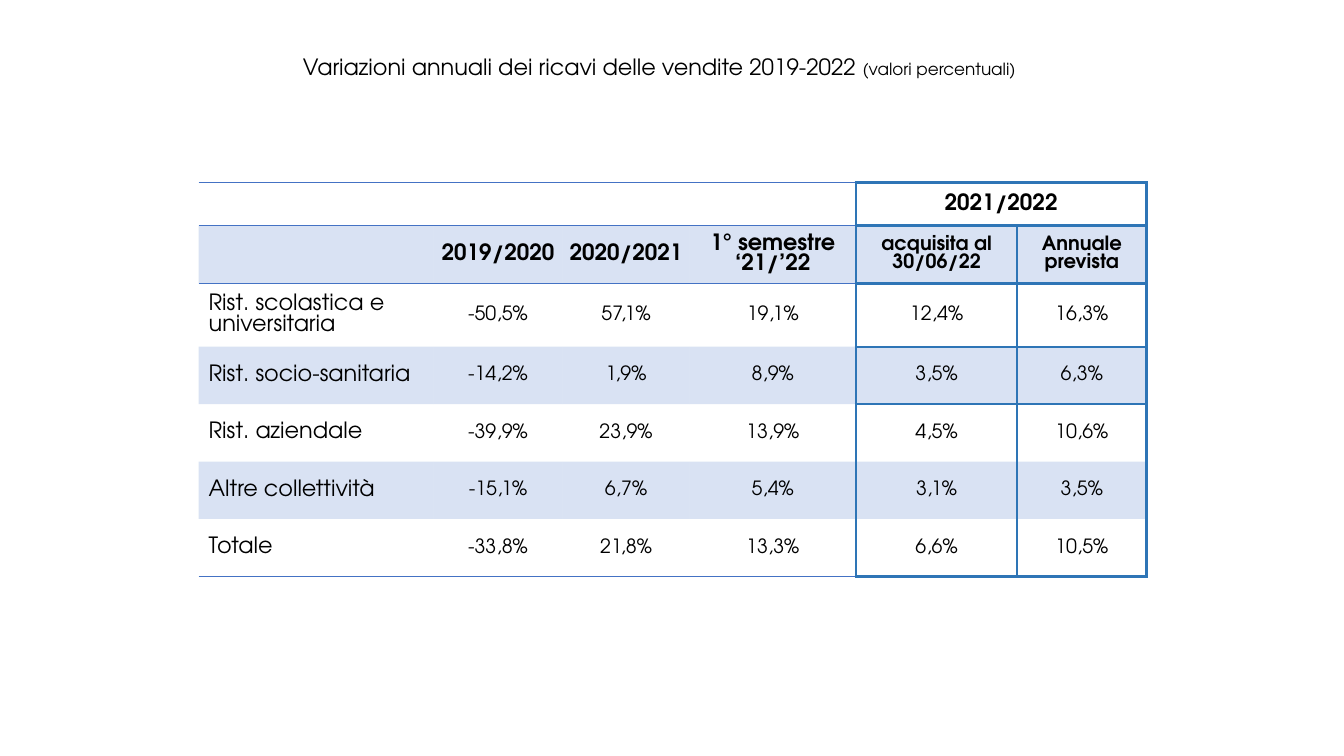
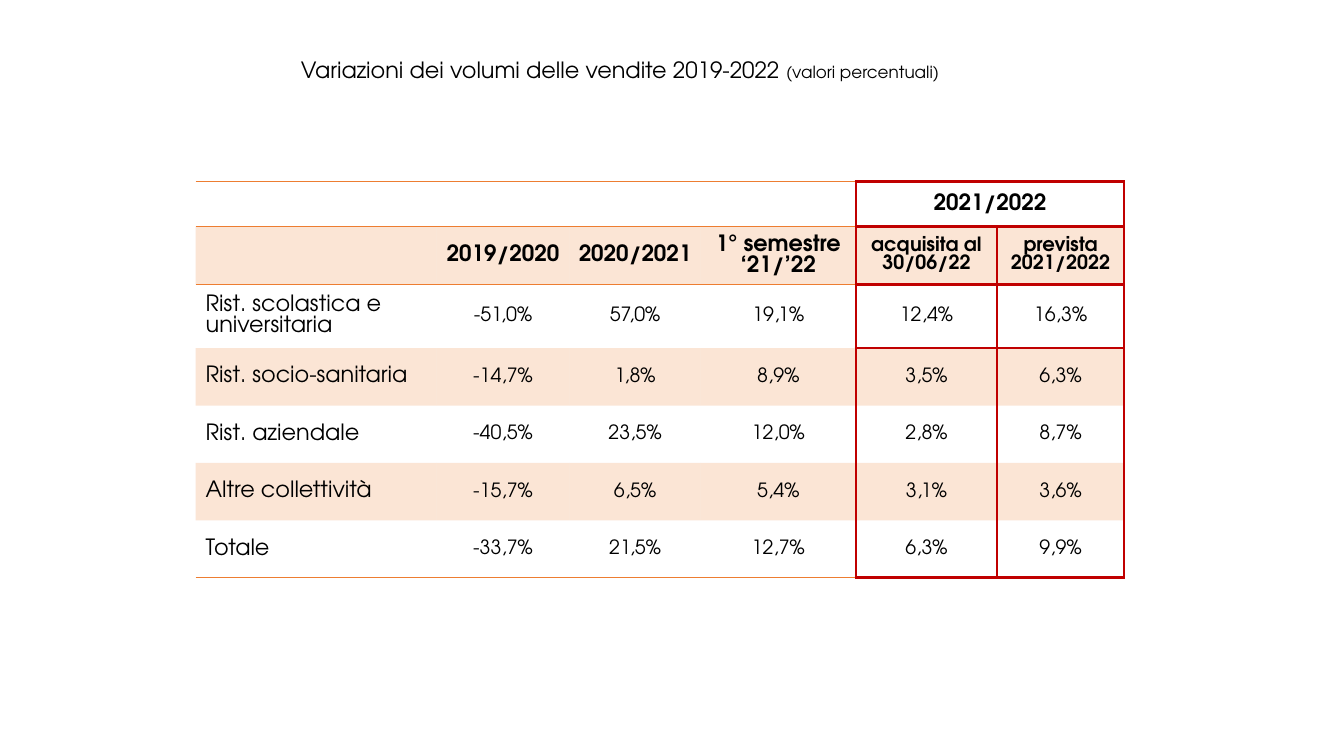
"""Build two slides comparing yearly changes in catering revenues and volumes."""
import lxml.etree
import pptx
import pptx.dml.color
import pptx.enum.text
import pptx.oxml.ns
import pptx.util

Inches = pptx.util.Inches
FONT = "TeX Gyre Adventor"
BLACK = "000000"
NO_STYLE = "{2D5ABB26-0587-4C30-8999-92F81FD0307C}"
THIN, MEDIUM, THICK = 1, 1.5, 2.25
FORECAST = 4
LABELS = [
    "Rist. scolastica e universitaria",
    "Rist. socio-sanitaria",
    "Rist. aziendale",
    "Altre collettività",
    "Totale",
]
HEADINGS = ["", "2019/2020", "2020/2021", "1° semestre ‘21/’22", "acquisita al 30/06/22"]
BODY_HEIGHTS = [0.57, 0.63, 0.57, 0.57, 0.57, 0.57]

REVENUES = {
    "title": "Variazioni annuali dei ricavi delle vendite 2019-2022 ",
    "title_at": (2.13, 0.48, 8.82, 0.37),
    "table_at": (1.97, 1.81),
    "widths": [2.33, 1.28, 1.26, 1.65, 1.6, 1.28],
    "top_height": 0.43,
    "accent": "4472C4",
    "frame": "2E75B6",
    "inner_lines": True,
    "last_heading": "Annuale prevista",
    "values": [
        ["-50,5%", "57,1%", "19,1%", "12,4%", "16,3%"],
        ["-14,2%", "1,9%", "8,9%", "3,5%", "6,3%"],
        ["-39,9%", "23,9%", "13,9%", "4,5%", "10,6%"],
        ["-15,1%", "6,7%", "5,4%", "3,1%", "3,5%"],
        ["-33,8%", "21,8%", "13,3%", "6,6%", "10,5%"],
    ],
}
VOLUMES = {
    "title": "Variazioni dei volumi delle vendite 2019-2022 ",
    "title_at": (2.22, 0.51, 7.86, 0.37),
    "table_at": (1.94, 1.8),
    "widths": [2.39, 1.32, 1.3, 1.54, 1.4, 1.26],
    "top_height": 0.45,
    "accent": "ED7D31",
    "frame": "C00000",
    "inner_lines": False,
    "last_heading": "prevista 2021/2022",
    "values": [
        ["-51,0%", "57,0%", "19,1%", "12,4%", "16,3%"],
        ["-14,7%", "1,8%", "8,9%", "3,5%", "6,3%"],
        ["-40,5%", "23,5%", "12,0%", "2,8%", "8,7%"],
        ["-15,7%", "6,5%", "5,4%", "3,1%", "3,6%"],
        ["-33,7%", "21,5%", "12,7%", "6,3%", "9,9%"],
    ],
}


def color(value):
    return pptx.dml.color.RGBColor.from_string(value)


def add_element(parent, tag, **attributes):
    return lxml.etree.SubElement(parent, pptx.oxml.ns.qn(tag), **attributes)


def format_span(span, size, bold=False):
    span.font.name = FONT
    span.font.size = pptx.util.Pt(size)
    span.font.bold = bold
    span.font.color.rgb = color(BLACK)


def add_title(page, content):
    box = page.shapes.add_textbox(*map(Inches, content["title_at"]))
    frame = box.text_frame
    frame.word_wrap = True
    frame.auto_size = pptx.enum.text.MSO_AUTO_SIZE.SHAPE_TO_FIT_TEXT
    para = frame.paragraphs[0]
    para.alignment = pptx.enum.text.PP_ALIGN.CENTER
    for text, size in [(content["title"], 16), ("(valori percentuali)", 12)]:
        span = para.add_run()
        span.text = text
        format_span(span, size)


def draw_border(cell, side, line_color, width):
    properties = cell._tc.get_or_add_tcPr()
    line = add_element(properties, "a:ln" + side, w=str(pptx.util.Pt(width)))
    add_element(add_element(line, "a:solidFill"), "a:srgbClr", val=line_color)


def draw_horizontal(table, boundary, columns, line_color, width):
    for column in columns:
        if boundary > 0:
            draw_border(table.cell(boundary - 1, column), "B", line_color, width)
        if boundary < len(table.rows):
            draw_border(table.cell(boundary, column), "T", line_color, width)


def draw_vertical(table, boundary, rows, line_color, width):
    for row in rows:
        draw_border(table.cell(row, boundary - 1), "R", line_color, width)
        if boundary < len(table.columns):
            draw_border(table.cell(row, boundary), "L", line_color, width)


def draw_lines(table, content):
    accent, frame = content["accent"], content["frame"]
    rows, columns = len(table.rows), len(table.columns)
    draw_vertical(table, FORECAST, range(rows), frame, THICK)
    draw_vertical(table, FORECAST + 1, [0], frame, THICK)
    if content["inner_lines"]:
        draw_vertical(table, FORECAST + 1, range(1, rows), frame, MEDIUM)
    draw_vertical(table, columns, range(rows), frame, THICK)
    for boundary in (0, 1, rows):
        draw_horizontal(table, boundary, range(FORECAST), accent, THIN)
    frame_lines = {0: THICK, 1: THICK, 2: THICK, rows: THICK}
    if content["inner_lines"]:
        frame_lines[3] = MEDIUM
    for boundary, width in sorted(frame_lines.items()):
        draw_horizontal(table, boundary, range(FORECAST, columns), frame, width)


def tint_cell(cell, fill_color):
    cell.fill.solid()
    cell.fill.fore_color.rgb = color(fill_color)
    shade = cell._tc.tcPr.find(".//" + pptx.oxml.ns.qn("a:solidFill") + "[last()]")
    shade = cell._tc.tcPr.findall(pptx.oxml.ns.qn("a:solidFill"))[0][0]
    add_element(shade, "a:alpha", val="20000")


def write_cell(cell, text, size, bold, centered):
    cell.vertical_anchor = pptx.enum.text.MSO_ANCHOR.MIDDLE
    para = cell.text_frame.paragraphs[0]
    para.text = text
    format_span(para.runs[0], size, bold)
    if centered:
        para.alignment = pptx.enum.text.PP_ALIGN.CENTER
        cell.margin_left = cell.margin_right = 0
        cell.margin_top = cell.margin_bottom = 0


def add_changes_table(page, content):
    texts = [[""] * FORECAST + ["2021/2022", ""], HEADINGS + [content["last_heading"]]]
    texts += [[label] + values for label, values in zip(LABELS, content["values"])]
    widths = content["widths"]
    heights = [content["top_height"]] + BODY_HEIGHTS
    size = (sum(widths), sum(heights))
    shape = page.shapes.add_table(
        len(heights), len(widths), *map(Inches, content["table_at"] + size)
    )
    table = shape.table
    table.first_row = table.horz_banding = False
    table._tbl.tblPr.find(pptx.oxml.ns.qn("a:tableStyleId")).text = NO_STYLE
    for column, width in zip(table.columns, widths):
        column.width = Inches(width)
    for row, height in zip(table.rows, heights):
        row.height = Inches(height)
    table.cell(0, FORECAST).merge(table.cell(0, FORECAST + 1))
    draw_lines(table, content)
    for row, row_texts in enumerate(texts):
        for column, text in enumerate(row_texts):
            cell = table.cell(row, column)
            if row % 2:
                tint_cell(cell, content["accent"])
            if text:
                header = row < 2
                small = row > 0 and column >= (FORECAST if header else 1)
                write_cell(cell, text, 14 if small else 16, header, column > 0)


def main():
    deck = pptx.Presentation()
    deck.slide_width, deck.slide_height = Inches(13.33), Inches(7.5)
    for content in (REVENUES, VOLUMES):
        page = deck.slides.add_slide(deck.slide_layouts[6])
        add_changes_table(page, content)
        add_title(page, content)
    deck.save("out.pptx")


if __name__ == "__main__":
    main()
